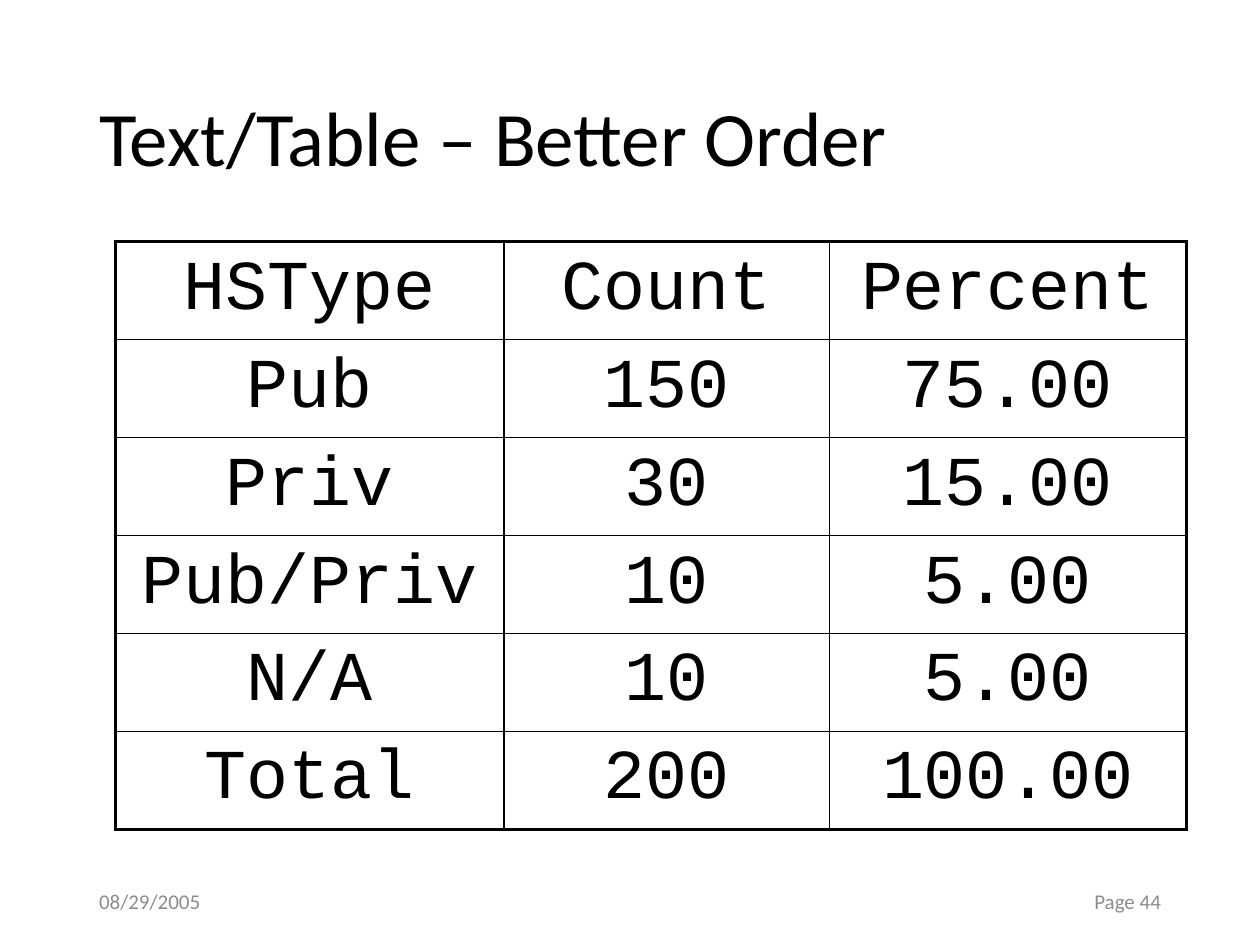
import pptx
import pptx.dml.color
import pptx.enum.text
import pptx.oxml
import pptx.oxml.ns
import pptx.util

Pt = pptx.util.Pt
Align = pptx.enum.text.PP_ALIGN
Anchor = pptx.enum.text.MSO_ANCHOR

BLACK = pptx.dml.color.RGBColor(0x00, 0x00, 0x00)
GRAY = pptx.dml.color.RGBColor(0x8C, 0x8C, 0x8C)
WHITE = pptx.dml.color.RGBColor(0xFF, 0xFF, 0xFF)

SANS = "Calibri"
MONO = "Courier New"
THICK, THIN = 2.25, 1

ROWS = [
    ("HSType", "Count", "Percent"),
    ("Pub", "150", "75.00"),
    ("Priv", "30", "15.00"),
    ("Pub/Priv", "10", "5.00"),
    ("N/A", "10", "5.00"),
    ("Total", "200", "100.00"),
]
WIDTHS = (222, 186, 204)
HEIGHT = 56


def write(frame, text, size, font, color, align):
    """Put one run of text in the first paragraph and return that paragraph."""
    para = frame.paragraphs[0]
    para.alignment = align
    run = para.add_run()
    run.text = text
    run.font.size = Pt(size)
    run.font.name = font
    run.font.color.rgb = color
    return para


def add_title(slide, text):
    title = slide.shapes.title
    title.left, title.top = Pt(49.5), Pt(28.75)
    title.width, title.height = Pt(621), Pt(104.5)
    frame = title.text_frame
    frame.vertical_anchor = Anchor.MIDDLE
    para = write(frame, text, 44, SANS, BLACK, Align.LEFT)
    para.line_spacing = 0.9


def add_note(slide, left, text, align):
    """Add a small gray text at the foot of the slide."""
    box = slide.shapes.add_textbox(Pt(left), Pt(500.5), Pt(162), Pt(28.75))
    frame = box.text_frame
    frame.word_wrap = True
    frame.vertical_anchor = Anchor.MIDDLE
    write(frame, text, 12, SANS, GRAY, align)


def set_edges(cell, edges):
    """Draw the cell borders; edges holds widths for left, right, top, bottom."""
    props = cell._tc.get_or_add_tcPr()
    names = pptx.oxml.ns.nsdecls("a")
    for spot, (side, width) in enumerate(zip("LRTB", edges)):
        line = pptx.oxml.parse_xml(
            f'<a:ln{side} {names} w="{int(Pt(width))}"><a:solidFill>'
            f'<a:srgbClr val="{BLACK}"/></a:solidFill></a:ln{side}>'
        )
        props.insert(spot, line)


def add_grid(slide, rows):
    """Add the table, with thick lines outside and thin lines inside."""
    last_row, last_col = len(rows) - 1, len(WIDTHS) - 1
    shape = slide.shapes.add_table(
        len(rows), len(WIDTHS), Pt(66), Pt(138),
        Pt(sum(WIDTHS)), Pt(HEIGHT * len(rows)),
    )
    table = shape.table
    table.first_row = False
    table.horz_banding = False
    for col, width in zip(table.columns, WIDTHS):
        col.width = Pt(width)
    for r, texts in enumerate(rows):
        table.rows[r].height = Pt(HEIGHT)
        for c, text in enumerate(texts):
            cell = table.cell(r, c)
            cell.fill.solid()
            cell.fill.fore_color.rgb = WHITE
            cell.vertical_anchor = Anchor.MIDDLE
            write(cell.text_frame, text, 40, MONO, BLACK, Align.CENTER)
            outer = (c == 0, c == last_col, r == 0, r == last_row)
            set_edges(cell, [THICK if edge else THIN for edge in outer])


def main():
    deck = pptx.Presentation()
    deck.slide_width, deck.slide_height = Pt(720), Pt(540)
    slide = deck.slides.add_slide(deck.slide_layouts[5])
    add_note(slide, 49.5, "08/29/2005", Align.LEFT)
    add_note(slide, 508.5, "Page 44", Align.RIGHT)
    add_title(slide, "Text/Table – Better Order")
    add_grid(slide, ROWS)
    deck.save("out.pptx")


if __name__ == "__main__":
    main()
